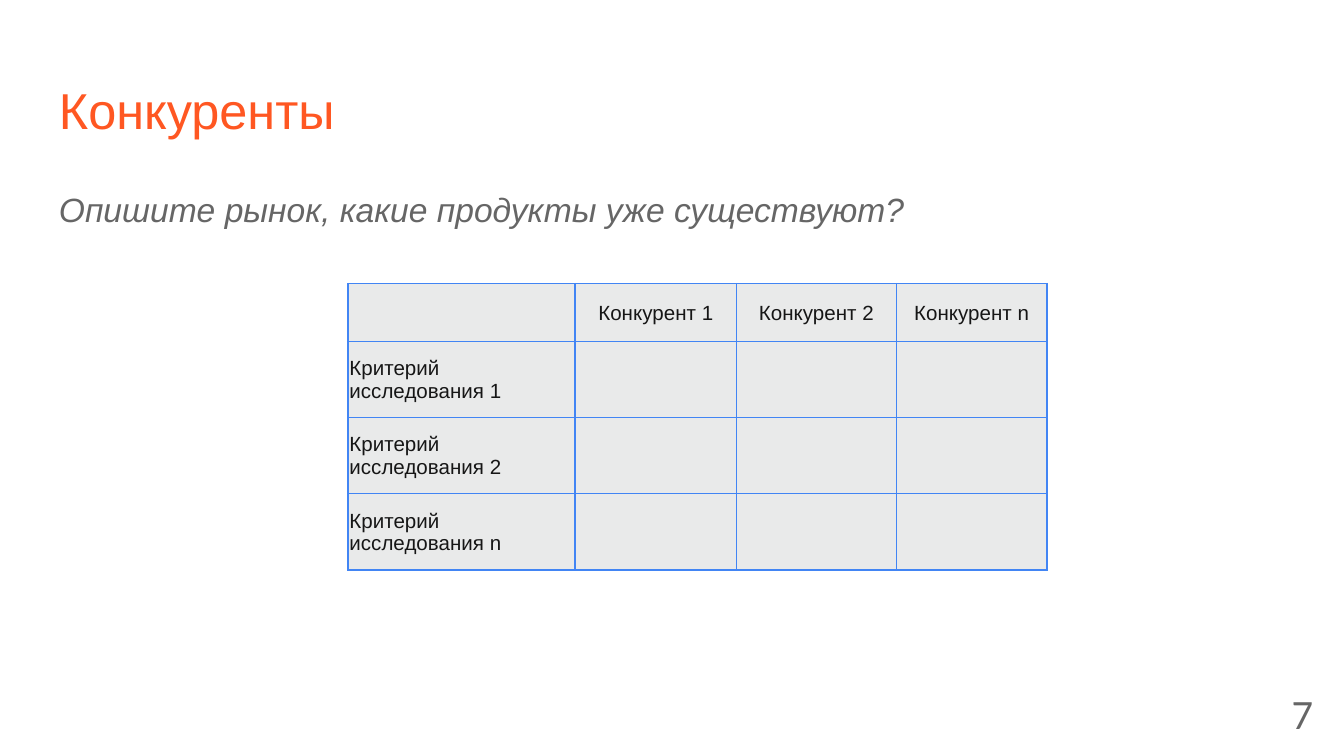
from dataclasses import dataclass

from lxml import etree
from pptx import Presentation
from pptx import util as u
from pptx.dml.color import RGBColor
from pptx.enum import text
from pptx.oxml import ns


@dataclass(frozen=True)
class Theme:
    accent: str = "FF5722"
    muted: str = "666666"
    ink: str = "161616"
    cell: str = "E9EAEA"
    border: str = "4285F4"
    font: str = "Arial"
    number_font: str = "Lato"
    title: int = 27
    body: int = 18
    number: int = 20
    table: int = 11


THEME = Theme()
ALIGN = text.PP_ALIGN
ANCHOR = text.MSO_ANCHOR


def style(p, size, color, font=THEME.font, align=ALIGN.LEFT):
    p.alignment = align
    p.font.size = u.Pt(size)
    p.font.name = font
    p.font.color.rgb = RGBColor.from_string(color)


def add_text(slide, box, words, anchor=ANCHOR.TOP, **look):
    tf = slide.shapes.add_textbox(*map(u.Inches, box)).text_frame
    tf.word_wrap = True
    tf.vertical_anchor = anchor
    tf.margin_left = tf.margin_right = u.Inches(0.1)
    tf.margin_top = tf.margin_bottom = u.Inches(0.1)
    p = tf.paragraphs[0]
    p.text = words
    style(p, **look)
    return p


def add_heading(slide, box):
    add_text(slide, box, "Конкуренты", size=THEME.title, color=THEME.accent)


def add_question(slide, box):
    p = add_text(slide, box, "Опишите рынок, какие продукты уже существуют?",
                 size=THEME.body, color=THEME.muted)
    p.font.italic = True
    p.line_spacing = 1.15
    p.space_after = u.Pt(12)


def add_page_number(slide, box):
    add_text(slide, box, "7", ANCHOR.MIDDLE, size=THEME.number,
             color=THEME.muted, font=THEME.number_font, align=ALIGN.RIGHT)


def add_borders(cell):
    tc_pr = cell._tc.get_or_add_tcPr()
    for side in ("a:lnL", "a:lnR", "a:lnT", "a:lnB"):
        ln = etree.SubElement(tc_pr, ns.qn(side), w=str(u.Pt(1)))
        fill = etree.SubElement(ln, ns.qn("a:solidFill"))
        etree.SubElement(fill, ns.qn("a:srgbClr"), val=THEME.border)
        etree.SubElement(ln, ns.qn("a:prstDash"), val="solid")


def format_cell(cell, words, align):
    add_borders(cell)
    cell.fill.solid()
    cell.fill.fore_color.rgb = RGBColor.from_string(THEME.cell)
    cell.vertical_anchor = ANCHOR.MIDDLE
    cell.margin_left = cell.margin_right = cell.margin_top = u.Inches(0.01)
    cell.margin_bottom = 0
    p = cell.text_frame.paragraphs[0]
    p.text = words
    style(p, THEME.table, THEME.ink, align=align)


def add_competitor_table(slide, box):
    suffixes = ("1", "2", "n")
    rows = [["", *(f"Конкурент {x}" for x in suffixes)]]
    rows += [[f"Критерий исследования {x}", "", "", ""] for x in suffixes]
    table = slide.shapes.add_table(
        len(rows), len(rows[0]), *map(u.Inches, box)).table
    table.first_row = table.horz_banding = False
    for column, width in zip(table.columns, (1.69, 1.2, 1.19, 1.12)):
        column.width = u.Inches(width)
    header = 0.43
    body = (box[3] - header) / len(suffixes)
    for i, row in enumerate(rows):
        table.rows[i].height = u.Inches(body if i else header)
        for j, words in enumerate(row):
            align = ALIGN.CENTER if j else ALIGN.LEFT
            format_cell(table.cell(i, j), words, align)


def main():
    prs = Presentation()
    prs.slide_width = u.Inches(10)
    prs.slide_height = prs.slide_width * 9 // 16
    slide = prs.slides.add_slide(prs.slide_layouts[6])
    add_heading(slide, (0.34, 0.49, 9.32, 0.63))
    add_question(slide, (0.34, 1.26, 9.32, 3.74))
    add_page_number(slide, (9.27, 5.1, 0.6, 0.43))
    add_competitor_table(slide, (2.59, 2.11, 5.2, 2.13))
    prs.save("out.pptx")


if __name__ == "__main__":
    main()
